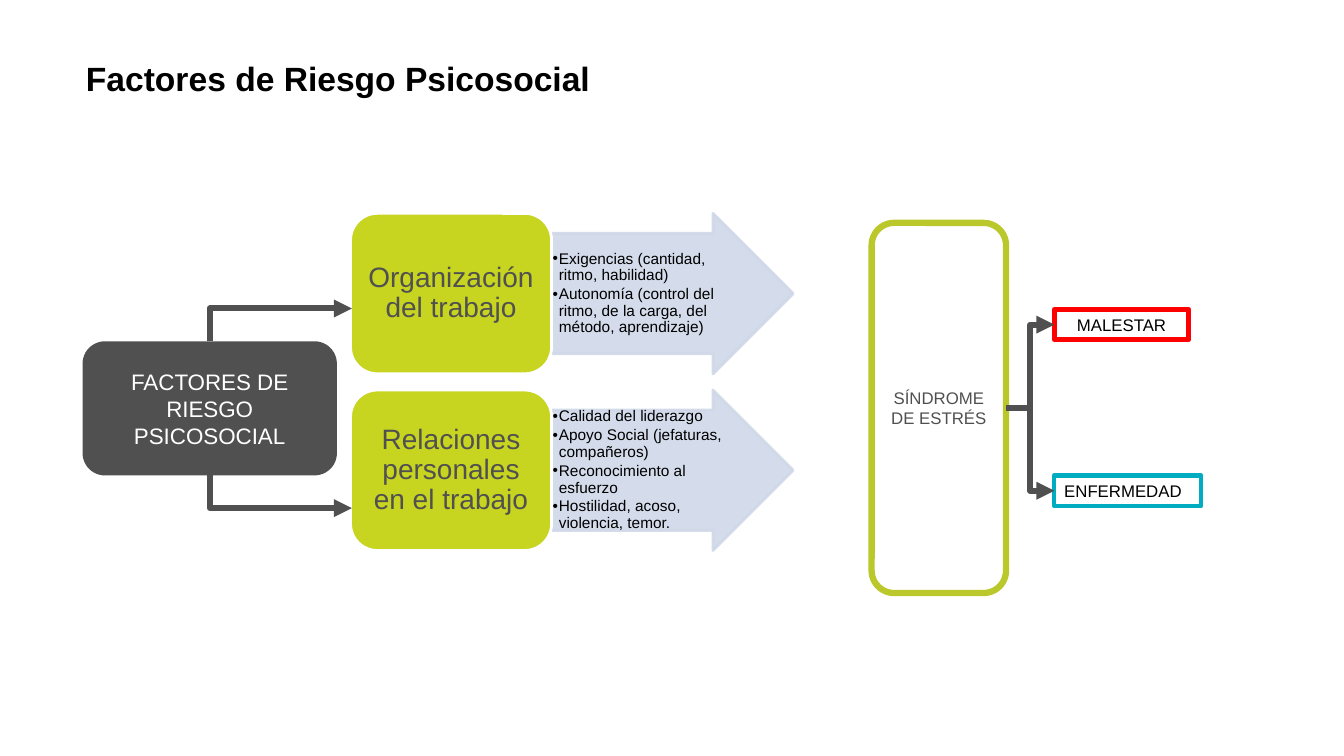
from lxml.etree import SubElement
from pptx import Presentation
from pptx.dml.color import RGBColor
from pptx.enum.shapes import MSO_CONNECTOR, MSO_SHAPE
from pptx.enum.text import MSO_ANCHOR, PP_ALIGN
from pptx.oxml.ns import qn
from pptx.util import Pt

# Content
TITLE = "Factores de Riesgo Psicosocial"
SOURCE = "FACTORES DE RIESGO PSICOSOCIAL"
SYNDROME = "SÍNDROME DE ESTRÉS"
FACTORS = [
    ("Organización del trabajo", [
        "Exigencias (cantidad, ritmo, habilidad)",
        "Autonomía (control del ritmo, de la carga, del método, aprendizaje)",
    ]),
    ("Relaciones personales en el trabajo", [
        "Calidad del liderazgo",
        "Apoyo Social (jefaturas, compañeros)",
        "Reconocimiento al esfuerzo",
        "Hostilidad, acoso, violencia, temor.",
    ]),
]
# text, top, width, outline colour, outline width, alignment
OUTCOMES = [
    ("MALESTAR", 221, 96, "FF0000", 3.5, PP_ALIGN.CENTER),
    ("ENFERMEDAD", 339.6, 105, "00ACC0", 3, PP_ALIGN.LEFT),
]

# Colours and layout, in points
GRAY, LIME, OLIVE, PALE = "505050", "C7D420", "BAC82B", "D0D8E8"
BLACK, WHITE = "000000", "FFFFFF"
FACTOR_LEFT, FACTOR_TOP, FACTOR_WIDTH, FACTOR_HEIGHT = 250.4, 152.4, 143.6, 114.6
FACTOR_STEP = 126.2
ARROW_LEFT, ARROW_WIDTH = 394, 172.6
SOURCE_BOX = (59, 243.8, 181.7, 95.8)
SYNDROME_BOX = (622.6, 159.2, 96, 264.4)
OUTCOME_LEFT, OUTCOME_HEIGHT = 753.1, 21.8

presentation = Presentation()
presentation.slide_width, presentation.slide_height = Pt(960), Pt(540)
slide = presentation.slides.add_slide(presentation.slide_layouts[6])


def color(hex_code):
    return RGBColor.from_string(hex_code)


def make_translucent(shape, percent):
    for element in shape._element.spPr.iter(qn("a:srgbClr")):
        SubElement(element, qn("a:alpha"), val=str(percent * 1000))


def add_box(kind, box, fill=None, line=None, line_width=0):
    shape = slide.shapes.add_shape(kind, *map(Pt, box))
    shape.shadow.inherit = False
    if fill:
        shape.fill.solid()
        shape.fill.fore_color.rgb = color(fill)
    else:
        shape.fill.background()
    if line:
        shape.line.color.rgb = color(line)
        shape.line.width = Pt(line_width)
    else:
        shape.line.fill.background()
    return shape


def write(shape, lines, size, font_color, align=PP_ALIGN.CENTER, margins=(7.2, 3.6),
          spacing=1.0, after=0, bullet=False, bold=False, anchor=MSO_ANCHOR.MIDDLE):
    frame = shape.text_frame
    frame.word_wrap = True
    frame.vertical_anchor = anchor
    frame.margin_left = frame.margin_right = Pt(margins[0])
    frame.margin_top = frame.margin_bottom = Pt(margins[1])
    frame.text = "\n".join(lines)
    for paragraph in frame.paragraphs:
        paragraph.alignment = align
        paragraph.line_spacing = spacing
        paragraph.space_after = Pt(after)
        if bullet:
            properties = paragraph._p.get_or_add_pPr()
            properties.set("marL", str(Pt(4.5)))
            properties.set("indent", str(Pt(-4.5)))
            SubElement(properties, qn("a:buFont"), typeface="Arial")
            SubElement(properties, qn("a:buChar"), char="•")
        paragraph.font.name = "Arial"
        paragraph.font.size = Pt(size)
        paragraph.font.bold = bold
        paragraph.font.color.rgb = color(font_color)


def add_elbow(start_x, start_y, end_x, end_y):
    connector = slide.shapes.add_connector(
        MSO_CONNECTOR.ELBOW, Pt(start_x), Pt(start_y), Pt(end_x), Pt(end_y))
    connector.line.color.rgb = color(GRAY)
    connector.line.width = Pt(4.25)
    properties = connector._element.spPr
    SubElement(properties.find(qn("a:ln")), qn("a:tailEnd"), type="triangle")
    SubElement(properties, qn("a:effectLst"))
    return connector


def add_corner(start_x, start_y, end_x, end_y):
    """One-bend arrow that leaves vertically: a quarter-turned elbow."""
    middle_x, middle_y = (start_x + end_x) / 2, (start_y + end_y) / 2
    half_width, half_height = abs(end_y - start_y) / 2, (end_x - start_x) / 2
    upward = end_y < start_y
    side = half_height if upward else -half_height
    connector = add_elbow(middle_x + half_width, middle_y + side,
                          middle_x - half_width, middle_y - side)
    properties = connector._element.spPr
    properties.find(qn("a:xfrm")).set("rot", str((90 if upward else 270) * 60000))
    properties.find(qn("a:prstGeom")).set("prst", "bentConnector2")


# Title
title = slide.shapes.add_textbox(Pt(52), Pt(31), Pt(476), Pt(48))
write(title, [TITLE], 24, BLACK, PP_ALIGN.LEFT, (9.4, 4.8), 1.2, bold=True,
      anchor=MSO_ANCHOR.TOP)

# Source of risk
source = add_box(MSO_SHAPE.ROUNDED_RECTANGLE, SOURCE_BOX, GRAY)
write(source, [SOURCE], 16, WHITE)

# Factors, each with its arrow of details
for row, (name, details) in enumerate(FACTORS):
    top = FACTOR_TOP + row * FACTOR_STEP
    arrow = add_box(MSO_SHAPE.RIGHT_ARROW, (ARROW_LEFT, top, ARROW_WIDTH, FACTOR_HEIGHT),
                    PALE, PALE, 2)
    arrow.adjustments[0] = 0.75
    make_translucent(arrow, 90)
    detail_box = slide.shapes.add_textbox(
        Pt(ARROW_LEFT), Pt(top + FACTOR_HEIGHT / 8), Pt(127.4), Pt(FACTOR_HEIGHT * 0.75))
    write(detail_box, details, 11, BLACK, PP_ALIGN.LEFT, (0.7, 0.7), 0.9, 1.65, bullet=True)
    factor = add_box(MSO_SHAPE.ROUNDED_RECTANGLE,
                     (FACTOR_LEFT, top, FACTOR_WIDTH, FACTOR_HEIGHT), LIME, WHITE, 2)
    write(factor, [name], 20, GRAY, margins=(5.6, 2.8), spacing=0.9)

# Syndrome and its outcomes
syndrome = add_box(MSO_SHAPE.ROUNDED_RECTANGLE, SYNDROME_BOX, line=OLIVE, line_width=4.5)
write(syndrome, [SYNDROME], 12, GRAY)
for text, top, width, outline, outline_width, align in OUTCOMES:
    outcome = add_box(MSO_SHAPE.RECTANGLE, (OUTCOME_LEFT, top, width, OUTCOME_HEIGHT),
                      line=outline, line_width=outline_width)
    write(outcome, [text], 12, BLACK, align)

# Connectors
left, top, width, height = SOURCE_BOX
for start_y, end_y in ((top, 220.4), (top + height, 363)):
    add_corner(left + width / 2, start_y, FACTOR_LEFT + 0.9, end_y)
left, top, width, height = SYNDROME_BOX
for outcome_top in (outcome[1] for outcome in OUTCOMES):
    add_elbow(left + width, top + height / 2,
              OUTCOME_LEFT, outcome_top + OUTCOME_HEIGHT / 2)

presentation.save("out.pptx")
